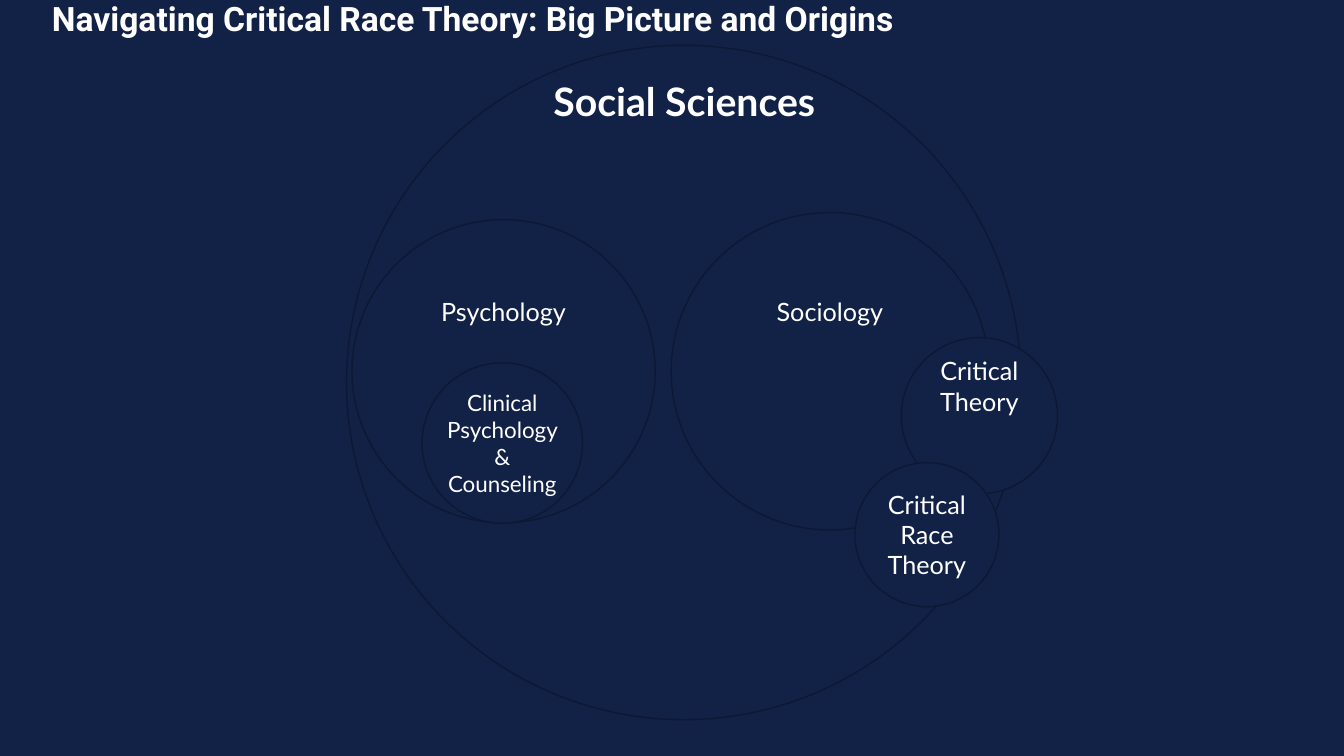
import dataclasses

import pptx
import pptx.dml.color
import pptx.enum.shapes
import pptx.enum.text
import pptx.util

ANCHOR = pptx.enum.text.MSO_ANCHOR
ALIGN = pptx.enum.text.PP_ALIGN
COLUMNS, ROWS = 32, 18


@dataclasses.dataclass(frozen=True)
class Theme:
    navy: str = "122146"
    outline: str = "0D1834"
    white: str = "FFFFFF"
    title_font: str = "Roboto"
    body_font: str = "Lato"
    title_size: int = 24
    heading_size: int = 28
    label_size: int = 18
    small_size: int = 16
    line_width: int = 1
    side_inset: float = 0.1


def rgb(code):
    return pptx.dml.color.RGBColor.from_string(code)


class VennPage:
    def __init__(self, deck, theme):
        self.theme = theme
        self.column = deck.slide_width / COLUMNS
        self.row = deck.slide_height / ROWS
        self.page = deck.slides.add_slide(deck.slide_layouts[6])
        self.paint(self.page.background.fill, theme.navy)

    def paint(self, fill, code):
        fill.solid()
        fill.fore_color.rgb = rgb(code)

    def place(self, left, top, width, height):
        return (int(left * self.column), int(top * self.row),
                int(width * self.column), int(height * self.row))

    def add_spans(self, para, text, size, font, bold=False):
        for index, line in enumerate(text.split("\n")):
            if index:
                para.add_line_break()
            span = para.add_run()
            span.text = line
            span.font.size = pptx.util.Pt(size)
            span.font.name = font
            span.font.bold = bold
            span.font.color.rgb = rgb(self.theme.white)

    def heading(self, area, text, size, font, wrap=True, anchor=ANCHOR.TOP, spacing=1.0):
        box = self.page.shapes.add_textbox(*self.place(*area))
        frame = box.text_frame
        frame.word_wrap = wrap
        frame.vertical_anchor = anchor
        if not wrap:
            frame.auto_size = pptx.enum.text.MSO_AUTO_SIZE.SHAPE_TO_FIT_TEXT
        para = frame.paragraphs[0]
        para.line_spacing = spacing
        self.add_spans(para, text, size, font, bold=True)

    def circle(self, center, diameter, label="", size=None, lift=0, inset=0):
        x, y = center
        left, top, width, _ = self.place(
            x - diameter / 2, y - diameter / 2, diameter, diameter)
        disc = self.page.shapes.add_shape(
            pptx.enum.shapes.MSO_SHAPE.OVAL, left, top, width, width)
        disc.shadow.inherit = False
        self.paint(disc.fill, self.theme.navy)
        self.paint(disc.line.fill, self.theme.outline)
        disc.line.width = pptx.util.Pt(self.theme.line_width)
        if not label:
            return
        frame = disc.text_frame
        frame.word_wrap = True
        frame.vertical_anchor = ANCHOR.MIDDLE
        frame.margin_left = frame.margin_right = pptx.util.Inches(inset)
        frame.margin_top = 0
        frame.margin_bottom = int(lift * self.row)
        para = frame.paragraphs[0]
        para.alignment = ALIGN.CENTER
        self.add_spans(para, label, size or self.theme.label_size, self.theme.body_font)


def main():
    deck = pptx.Presentation()
    deck.slide_width = pptx.util.Inches(13.33)
    deck.slide_height = pptx.util.Inches(7.5)
    theme = Theme()
    venn = VennPage(deck, theme)

    venn.heading((1, 0, 29.9, 0.96),
                 "Navigating Critical Race Theory: Big Picture and Origins",
                 theme.title_size, theme.title_font, anchor=ANCHOR.MIDDLE, spacing=0.9)
    venn.circle((16.28, 9.11), 16.06)
    venn.circle((19.76, 8.84), 7.56, "Sociology", lift=2.83, inset=theme.side_inset)
    venn.circle((11.99, 8.84), 7.22, "Psychology", lift=2.83, inset=theme.side_inset)
    venn.circle((23.32, 9.9), 3.72, "Critical Theory", lift=1.42, inset=theme.side_inset)
    venn.heading((12.94, 1.73, 7.08, 1.37), "Social Sciences",
                 theme.heading_size, theme.body_font, wrap=False)
    venn.circle((11.96, 10.55), 3.82, "Clinical Psychology & Counseling", theme.small_size)
    venn.circle((22.07, 12.73), 3.43, "Critical\nRace\nTheory")

    deck.save("out.pptx")


if __name__ == "__main__":
    main()
